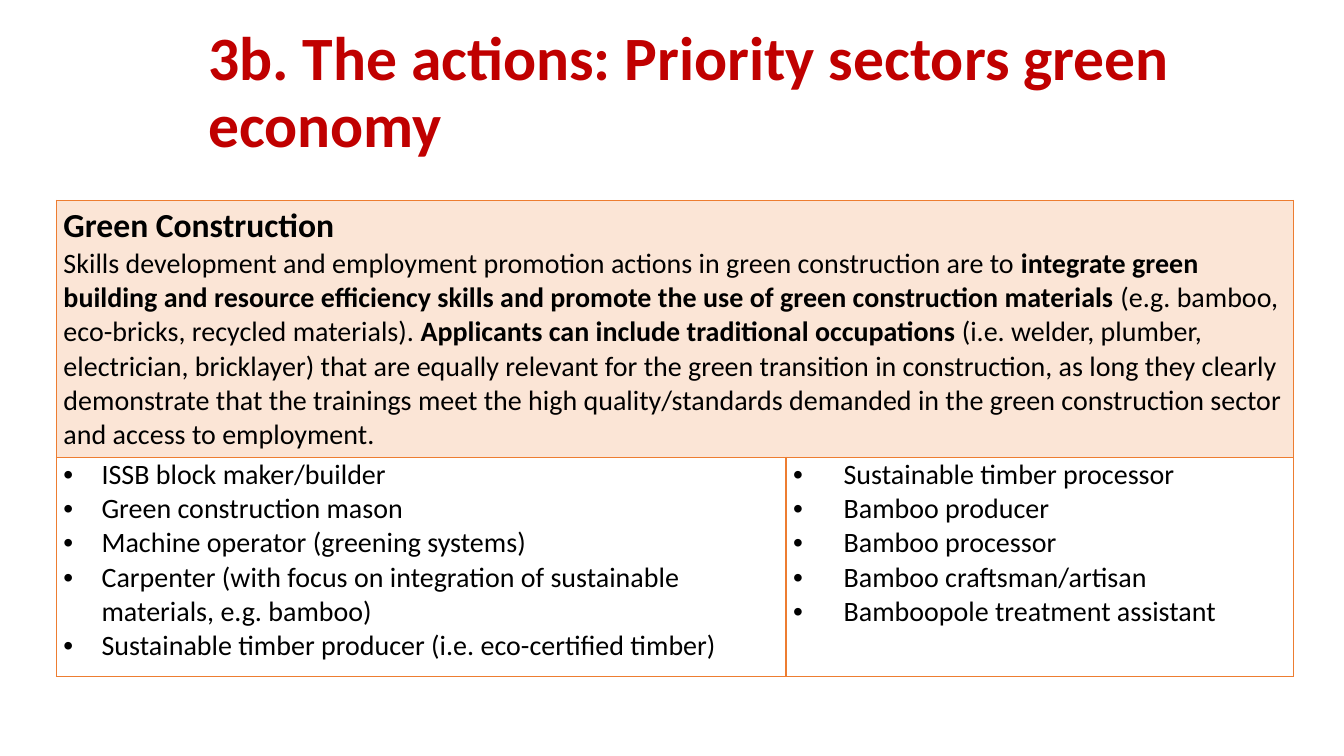
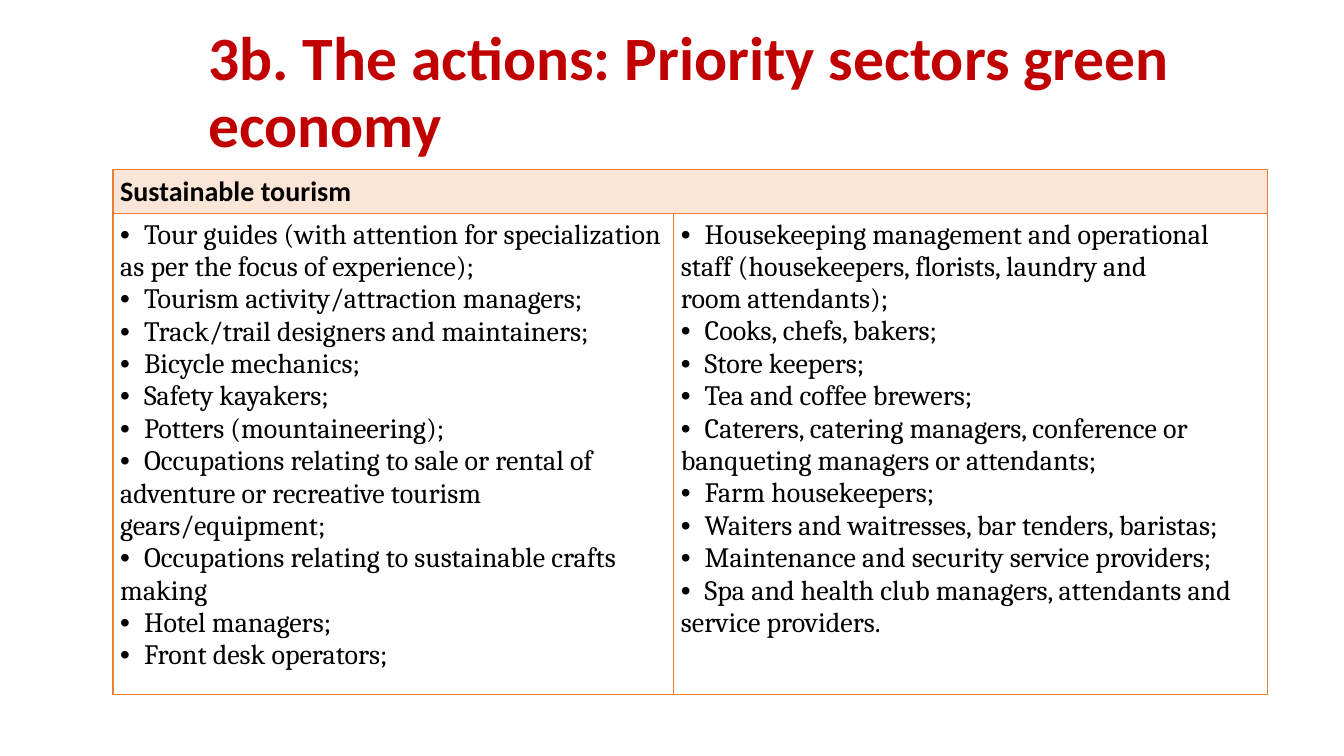
import dataclasses
import typing

import lxml.etree
import pptx
import pptx.dml.color
import pptx.enum.text
import pptx.oxml.ns
import pptx.slide
import pptx.table
import pptx.text.text
import pptx.util

Cm = pptx.util.Cm
Pt = pptx.util.Pt
qn = pptx.oxml.ns.qn

# Shared look
RED, BLACK, ORANGE, PEACH = "C00000", "000000", "ED7D31", "FBE5D6"
TITLE = "3b. The actions: Priority sectors green economy"
HEAD = {"name": "Calibri", "size": Pt(44), "bold": True}
BODY = {"name": "Calibri", "size": Pt(20), "bold": False}
STRONG = BODY | {"bold": True}
LARGE = STRONG | {"size": Pt(24)}
SERIF = BODY | {"name": "Cambria"}
DOT = BODY | {"name": "Arial"}
TAB = Cm(0.6)


class Run(typing.NamedTuple):
    text: str
    style: dict[str, typing.Any]


@dataclasses.dataclass
class Para:
    runs: list[Run]
    hang: float = 0     # bullet indent in cm
    tab: bool = False   # first line set off by a tab stop


@dataclasses.dataclass
class Grid:
    left: float
    top: float
    cols: list[float]
    rows: list[float]
    head: list[Para]
    lists: list[list[Para]]
    pad: float          # top and bottom margin of the lists


def tint(code: str) -> pptx.dml.color.RGBColor:
    return pptx.dml.color.RGBColor.from_string(code)


def assign(item: typing.Any, values: dict[str, typing.Any]) -> None:
    for key, value in values.items():
        setattr(item, key, value)


# Text
def write(frame: pptx.text.text.TextFrame, paras: list[Para], color: str) -> None:
    for i, para in enumerate(paras):
        line = frame.add_paragraph() if i else frame.paragraphs[0]
        props = line._p.get_or_add_pPr()
        if para.hang:
            props.set("marL", str(Cm(para.hang)))
            props.set("indent", str(-Cm(para.hang)))
            lxml.etree.SubElement(props, qn("a:buFont"), typeface="Arial")
            lxml.etree.SubElement(props, qn("a:buChar"), char="•")
        if para.tab:
            tabs = lxml.etree.SubElement(props, qn("a:tabLst"))
            lxml.etree.SubElement(tabs, qn("a:tab"), pos=str(TAB), algn="l")
        for part in para.runs:
            run = line.add_run()
            run.text = part.text
            assign(run.font, part.style)
            run.font.color.rgb = tint(color)


def bullets(items: list[str], hang: float) -> list[Para]:
    return [Para([Run(item, BODY)], hang=hang) for item in items]


def tabbed(items: list[str]) -> list[Para]:
    return [Para([Run("•\t", DOT), Run(item, SERIF)], tab=True) for item in items]


def title(slide: pptx.slide.Slide) -> None:
    box = slide.shapes.add_textbox(Cm(5), Cm(0.48), Cm(26.31), Cm(3.78))
    frame = box.text_frame
    assign(frame, {"word_wrap": True,
                   "vertical_anchor": pptx.enum.text.MSO_ANCHOR.MIDDLE})
    write(frame, [Para([Run(TITLE, HEAD)])], RED)
    frame.paragraphs[0].line_spacing = 0.9


# Table
def border(cell: typing.Any) -> None:
    props = cell._tc.get_or_add_tcPr()
    for i, side in enumerate("LRTB"):
        edge = lxml.etree.Element(qn(f"a:ln{side}"), w=str(Pt(1)))
        fill = lxml.etree.SubElement(edge, qn("a:solidFill"))
        lxml.etree.SubElement(fill, qn("a:srgbClr"), val=ORANGE)
        props.insert(i, edge)


def draw(slide: pptx.slide.Slide, grid: Grid) -> None:
    table = slide.shapes.add_table(
        len(grid.rows), len(grid.cols), Cm(grid.left), Cm(grid.top),
        Cm(sum(grid.cols)), Cm(sum(grid.rows))).table
    assign(table, {"first_row": False, "horz_banding": False})
    for col, width in zip(table.columns, grid.cols):
        col.width = Cm(width)
    for row, height in zip(table.rows, grid.rows):
        row.height = Cm(height)
    for i, row in enumerate(table.rows):
        pad = Cm(grid.pad if i else 0.13)
        for cell in row.cells:
            assign(cell, {"margin_left": Cm(0.18), "margin_right": Cm(0.18),
                          "margin_top": pad, "margin_bottom": pad})
            if i:
                cell.fill.background()
            else:
                cell.fill.solid()
                cell.fill.fore_color.rgb = tint(PEACH)
            border(cell)
    table.cell(0, 0).merge(table.cell(0, len(grid.cols) - 1))
    write(table.cell(0, 0).text_frame, grid.head, BLACK)
    for j, paras in enumerate(grid.lists):
        write(table.cell(1, j).text_frame, paras, BLACK)


# Content
BUILD = Grid(
    left=1.42, top=5.05, cols=[18.39, 12.78], rows=[6.48, 5.52], pad=0,
    head=[
        Para([Run("Green Construction", LARGE)]),
        Para([
            Run("Skills development and employment promotion actions in green "
                "construction are to ", BODY),
            Run("integrate green building and resource efficiency skills and "
                "promote the use of green construction materials", STRONG),
            Run(" (e.g. bamboo, eco-bricks, recycled materials). ", BODY),
            Run("Applicants can include traditional occupations ", STRONG),
            Run("(i.e. welder, plumber, electrician, bricklayer) that are "
                "equally relevant for the green transition in construction, as "
                "long they clearly demonstrate that the trainings meet the high "
                "quality/standards demanded in the green construction sector "
                "and access to employment.", BODY),
        ]),
    ],
    lists=[
        bullets([
            "ISSB block maker/builder",
            "Green construction mason",
            "Machine operator (greening systems)",
            "Carpenter (with focus on integration of sustainable materials, "
            "e.g. bamboo)",
            "Sustainable timber producer (i.e. eco-certified timber)",
        ], 0.96),
        bullets([
            "Sustainable timber processor",
            "Bamboo producer",
            "Bamboo processor",
            "Bamboo craftsman/artisan",
            "Bamboopole treatment assistant",
        ], 1.27),
    ])

TOUR = Grid(
    left=2.85, top=4.27, cols=[14.13, 14.96], rows=[1.11, 11.89], pad=0.13,
    head=[Para([Run("Sustainable tourism", STRONG)])],
    lists=[
        tabbed([
            "Tour guides (with attention for specialization as per the focus "
            "of experience);",
            "Tourism activity/attraction managers;",
            "Track/trail designers and maintainers;",
            "Bicycle mechanics;",
            "Safety kayakers;",
            "Potters (mountaineering);",
            "Occupations relating to sale or rental of adventure or "
            "recreative tourism gears/equipment;",
            "Occupations relating to sustainable crafts making",
            "Hotel managers;",
            "Front desk operators;",
        ]),
        [
            *tabbed(["Housekeeping management and operational staff "
                     "(housekeepers, florists, laundry and"]),
            Para([Run("room attendants);", SERIF)]),
            *tabbed([
                "Cooks, chefs, bakers;",
                "Store keepers;",
                "Tea and coffee brewers;",
                "Caterers, catering managers, conference or banqueting "
                "managers or attendants;",
                "Farm housekeepers;",
                "Waiters and waitresses, bar tenders, baristas;",
                "Maintenance and security service providers;",
                "Spa and health club managers, attendants and service "
                "providers.",
            ]),
        ],
    ])


def main() -> None:
    deck = pptx.Presentation()
    assign(deck, {"slide_width": Cm(33.87), "slide_height": Cm(19.05)})
    for grid in (BUILD, TOUR):
        slide = deck.slides.add_slide(deck.slide_layouts[6])
        title(slide)
        draw(slide, grid)
    deck.save("out.pptx")


if __name__ == "__main__":
    main()
